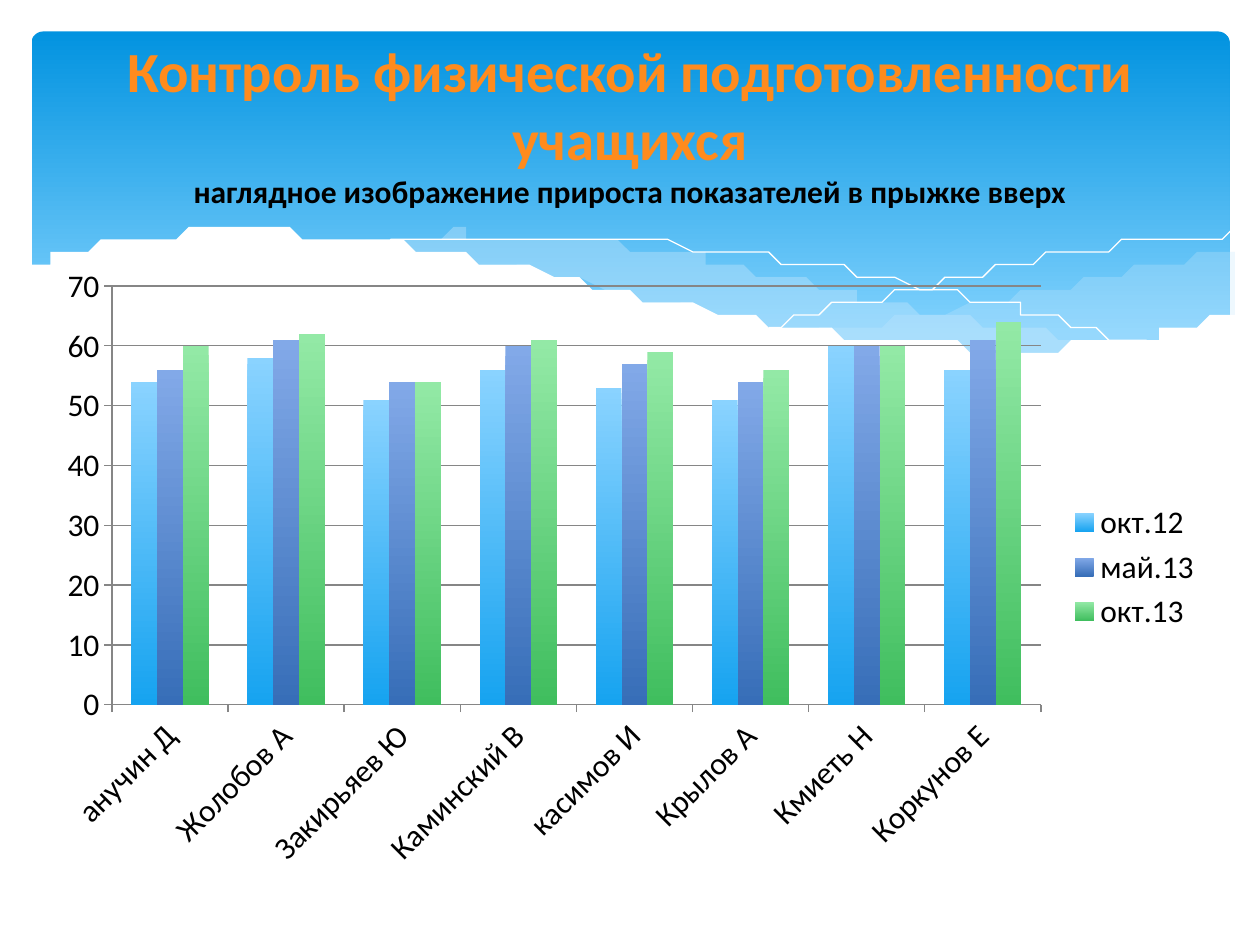
from lxml.etree import SubElement
from pptx import Presentation
from pptx.chart.data import CategoryChartData
from pptx.dml.color import RGBColor
from pptx.enum.chart import XL_CHART_TYPE, XL_LEGEND_POSITION, XL_TICK_MARK
from pptx.enum.shapes import MSO_SHAPE
from pptx.enum.text import MSO_ANCHOR, PP_ALIGN
from pptx.oxml.ns import qn
from pptx.util import Inches, Pt

FONT = "Calibri"
COLORS = {
    "sky": ("0293E0", "83D3FE"), "wave": "C6E7FC", "white": "FFFFFF",
    "title": "FF8B1D", "text": "000000", "grid": "868686",
    "окт.12": ("8AD3FF", "16A3F0"),
    "май.13": ("82A9E8", "376EB8"),
    "окт.13": ("93E9A6", "40BE5E"),
}
CELL = Inches(0.1)  # the slide is a grid of 100 columns and 75 rows


def shade(fill, pair, end=1):
    """Fill from top to bottom, reaching the second colour at the share end."""
    fill.gradient()
    fill.gradient_angle = 270
    for stop, tint, place in zip(fill.gradient_stops, pair, (0, end)):
        stop.color.rgb = RGBColor.from_string(tint)
        stop.position = place


def curve(knots, steps=8):
    """Points of a smooth (Catmull-Rom) curve through the knots."""
    ends = [knots[0], *knots, knots[-1]]
    dots = [knots[0]]
    for a, b, c, d in zip(ends, ends[1:], ends[2:], ends[3:]):
        for i in range(1, steps + 1):
            t = i / steps
            dots.append(tuple(
                (2 * q + (r - p) * t + (2 * p - 5 * q + 4 * r - s) * t ** 2
                 + (3 * q - p - 3 * r + s) * t ** 3) / 2
                for p, q, r, s in zip(a, b, c, d)))
    return dots


prs = Presentation()
prs.slide_width, prs.slide_height = 100 * CELL, 75 * CELL
slide = prs.slides.add_slide(prs.slide_layouts[6])
shapes = slide.shapes

# Blue panel
panel = shapes.add_shape(MSO_SHAPE.ROUNDED_RECTANGLE,
                         *(int(n * CELL) for n in (2.5, 2.5, 95.1, 27)))
panel.adjustments[0] = 0.034
panel.shadow.inherit = False
panel.line.fill.background()
shade(panel.fill, COLORS["sky"], 0.9)

# Waves: smooth edges, fill colour, opacity in percent (no fill: a white line)
waves = [
    ([[(97.6, 20), (93.5, 20.7), (86.1, 22.3), (77.9, 24.2), (66.1, 26.5)],
      [(66.1, 26.5), (71.9, 27.2), (76.9, 27.7), (81.4, 27.8), (86.3, 27.5),
       (90.5, 26.9), (94.2, 25.9), (97.6, 24.7)]], "wave", 29),
    ([[(89.3, 27.3), (80.7, 26), (70.6, 24), (62.9, 22.2), (55.5, 20.5),
       (48.9, 19.4), (42, 18.7), (36.1, 18.5), (31.3, 18.8), (28.6, 19.1)],
      [(28.6, 19.1), (36.2, 20.3), (44.9, 22.2), (56.6, 24.8), (65, 26.4),
       (72.2, 27.4), (79.6, 27.8), (84.8, 27.7), (89.3, 27.3)]], "wave", 40),
    ([[(30.9, 19.5), (35.3, 18.9), (41.6, 18.7), (48.9, 19), (58.2, 20),
       (66.5, 21.3), (76, 23.3), (83.1, 25.1), (90.7, 27.2)]], None, 100),
    ([[(61.3, 25.7), (69.5, 23.5), (77.6, 21.6), (86.6, 19.9),
       (92.4, 19), (97.5, 18.5)]], None, 100),
    ([[(97.7, 24.6), (94, 25.9), (89.9, 26.9), (85, 27.5), (79.3, 27.6),
       (72.6, 27.2), (64.8, 26.2), (55.5, 24.5), (44.7, 22), (36.5, 20.2),
       (29.2, 19), (23, 18.5), (17.7, 18.4), (13.2, 18.6), (9.5, 19.1),
       (6.7, 19.7), (4.6, 20.3), (2.3, 21.3)],
      [(2.3, 32.9), (97.7, 32.9)]], "white", 100),
]
for edges, tint, alpha in waves:
    dots = [dot for edge in edges for dot in curve(edge)]
    pen = shapes.build_freeform(*dots[0], scale=CELL)
    pen.add_line_segments(dots[1:], close=tint is not None)
    wave = pen.convert_to_shape()
    wave.shadow.inherit = False
    if tint is None:
        wave.fill.background()
        wave.line.color.rgb = RGBColor.from_string(COLORS["white"])
        wave.line.width = 0
        continue
    wave.line.fill.background()
    wave.fill.solid()
    wave.fill.fore_color.rgb = RGBColor.from_string(COLORS[tint])
    if alpha < 100:
        rgb = wave.fill._xPr.find(qn("a:solidFill"))[0]
        SubElement(rgb, qn("a:alpha"), val=str(alpha * 1000))

# Chart
data = CategoryChartData()
data.categories = ["анучин Д", "Жолобов А", "Закирьяев Ю", "Каминский В",
                   "касимов И", "Крылов А", "Кмиеть Н", "Коркунов Е"]
data.add_series("окт.12", (54, 58, 51, 56, 53, 51, 60, 56))
data.add_series("май.13", (56, 61, 54, 60, 57, 54, 60, 61))
data.add_series("окт.13", (60, 62, 54, 61, 59, 56, 60, 64))
chart = shapes.add_chart(XL_CHART_TYPE.COLUMN_CLUSTERED,
                         *(int(n * CELL) for n in (3.5, 20.2, 92.9, 49.6)),
                         data).chart
chart.has_title = False
chart.font.name, chart.font.size = FONT, Pt(18)
chart.font.color.rgb = RGBColor.from_string(COLORS["text"])
chart.has_legend = True
chart.legend.position = XL_LEGEND_POSITION.RIGHT
chart.legend.include_in_layout = False
plot = chart.plots[0]
plot.gap_width, plot.overlap = 150, 0
plot.vary_by_categories = False
for series in plot.series:
    shade(series.format.fill, COLORS[series.name])
rows = chart.value_axis
rows.minimum_scale, rows.maximum_scale, rows.major_unit = 0, 70, 10
rows.has_major_gridlines = True
for axis in (chart.category_axis, rows):
    axis.major_tick_mark = XL_TICK_MARK.OUTSIDE
for part in (chart.category_axis, rows, rows.major_gridlines):
    part.format.line.color.rgb = RGBColor.from_string(COLORS["grid"])
    part.format.line.width = Pt(0.75)

# Title
frame = shapes.add_textbox(*(int(n * CELL) for n in (5, 1.7, 90, 16.1))).text_frame
frame.word_wrap = True
frame.vertical_anchor = MSO_ANCHOR.MIDDLE
head = frame.paragraphs[0]
head.text = ("Контроль физической подготовленности учащихся\v"
             "наглядное изображение прироста показателей в прыжке вверх")
head.alignment = PP_ALIGN.CENTER
for run, size, tint in zip(head.runs, (32.4, 18), ("title", "text")):
    run.font.name, run.font.size, run.font.bold = FONT, Pt(size), True
    run.font.color.rgb = RGBColor.from_string(COLORS[tint])

prs.save("out.pptx")
